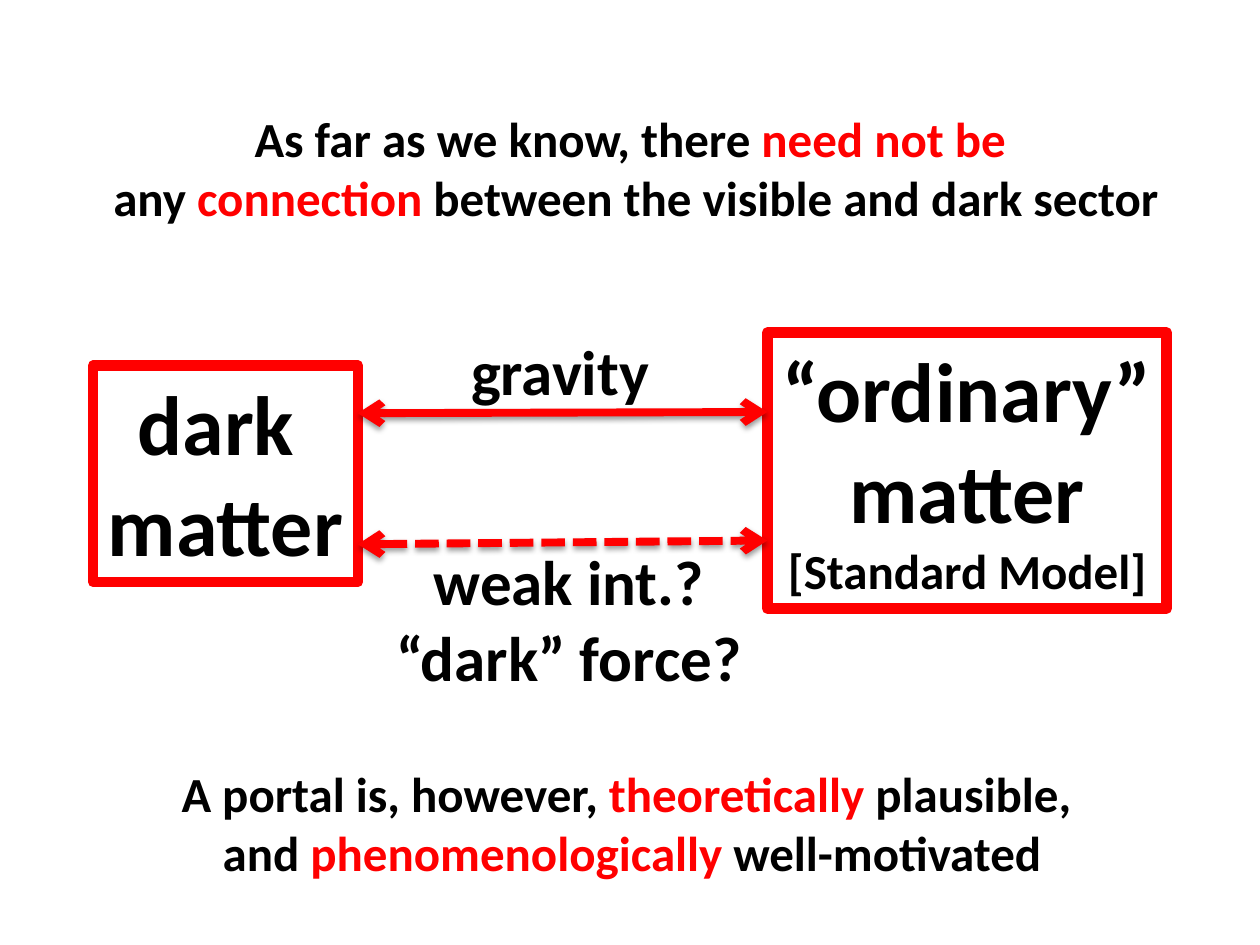
from dataclasses import dataclass

from lxml import etree
from pptx import Presentation
from pptx import util as u
from pptx.dml.color import RGBColor
from pptx.enum import dml, shapes, text
from pptx.oxml.ns import qn

WIDE, HIGH = 10, 7.5
RED, BLACK = "FF0000", "000000"


@dataclass
class Area:
    """A place on the slide, in percent of its width and height."""
    x: float
    y: float
    w: float
    h: float


@dataclass
class Link:
    """A two-headed arrow between the sectors, with its label."""
    start: float
    end: float
    area: Area
    lines: list
    align: str = "CENTER"
    dashed: bool = False


def across(share: float) -> int:
    return u.Inches(WIDE * share / 100)


def down(share: float) -> int:
    return u.Inches(HIGH * share / 100)


def color(code: str) -> RGBColor:
    return RGBColor.from_string(code)


def write(host, area: Area, lines: list, size=28, last=None,
          align="CENTER", border=None):
    """Put bold lines in an area; words between asterisks turn red."""
    box = host.add_textbox(across(area.x), down(area.y),
                           across(area.w), down(area.h))
    frame = box.text_frame
    frame.word_wrap = False
    frame.auto_size = text.MSO_AUTO_SIZE.SHAPE_TO_FIT_TEXT
    for row, line in enumerate(lines):
        para = frame.add_paragraph() if row else frame.paragraphs[0]
        para.alignment = text.PP_ALIGN[align]
        final = row == len(lines) - 1
        for part, words in enumerate(line.split("*")):
            if not words:
                continue
            run = para.add_run()
            run.text = words
            font = run.font
            font.name, font.bold = "Calibri", True
            font.size = u.Pt(last if last and final else size)
            font.color.rgb = color(RED if part % 2 else BLACK)
    if border:
        box.line.color.rgb = color(border)
        box.line.width = u.Pt(6)


def shade(props) -> None:
    """Give a line a soft shadow straight below it."""
    effects = etree.SubElement(props, qn("a:effectLst"))
    cast = etree.SubElement(effects, qn("a:outerShdw"), blurRad=str(u.Pt(3.1)),
                            dist=str(u.Pt(1.6)), dir="5400000", rotWithShape="0")
    tint = etree.SubElement(cast, qn("a:srgbClr"), val=BLACK)
    etree.SubElement(tint, qn("a:alpha"), val="38000")


def draw(slide, link: Link, left: float, right: float) -> None:
    """Group an arrow with its label."""
    group = slide.shapes.add_group_shape().shapes
    arrow = group.add_connector(shapes.MSO_CONNECTOR.STRAIGHT,
                                across(left), down(link.start),
                                across(right), down(link.end))
    arrow.line.color.rgb = color(RED)
    arrow.line.width = u.Pt(4.5)
    if link.dashed:
        arrow.line.dash_style = dml.MSO_LINE.SQUARE_DOT
    stroke = arrow.line._get_or_add_ln()
    for tip in ("a:headEnd", "a:tailEnd"):
        etree.SubElement(stroke, qn(tip), type="arrow")
    shade(arrow._element.spPr)
    write(group, link.area, link.lines, size=36, align=link.align)


def main() -> None:
    deck = Presentation()
    deck.slide_width, deck.slide_height = u.Inches(WIDE), u.Inches(HIGH)
    slide = deck.slides.add_slide(deck.slide_layouts[6])

    # Statements above and below the diagram
    write(slide.shapes, Area(7.4, 10.8, 86.1, 13.87),
          ["As far as we know, there *need not be *",
           "any *connection* between the visible and dark sector"])
    write(slide.shapes, Area(13.2, 80.13, 73.9, 13.87),
          ["A portal is, however, *theoretically* plausible, ",
           "and *phenomenologically *well-motivated"])

    # The two sectors
    dark = Area(7.4, 38.67, 21, 22.93)
    plain = Area(60.9, 35.2, 31.7, 29.2)
    write(slide.shapes, dark, ["dark ", "matter"], size=48, border=RED)
    write(slide.shapes, plain, ["“ordinary”", "matter", "[Standard Model]"],
          size=48, last=28, border=RED)

    # Links between them
    links = [
        Link(43.73, 43.6, Area(36.4, 34.53, 16.5, 9.47), ["gravity"],
             align="LEFT"),
        Link(57.6, 57.2, Area(30.1, 56.8, 30.1, 17.47),
             ["weak int.?", "“dark” force? "], dashed=True),
    ]
    for link in links:
        draw(slide, link, dark.x + dark.w, plain.x)

    deck.save("out.pptx")


if __name__ == "__main__":
    main()
